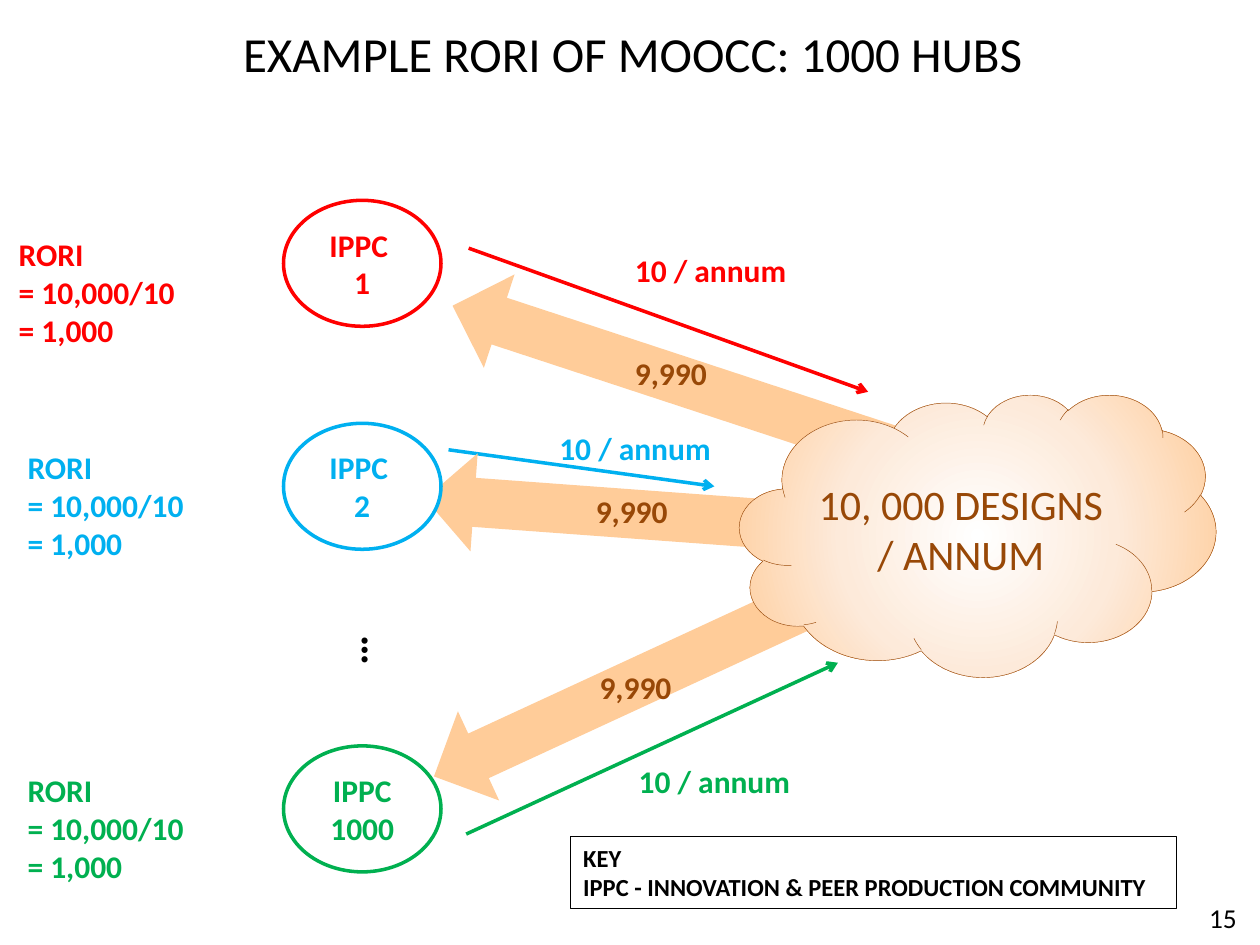
from dataclasses import dataclass

from lxml.etree import SubElement
from pptx import Presentation
from pptx.dml.color import RGBColor
from pptx.enum.shapes import MSO_CONNECTOR as Connector, MSO_SHAPE as Shape
from pptx.enum.text import MSO_ANCHOR as Anchor, PP_ALIGN as Align
from pptx.oxml import parse_xml
from pptx.oxml.ns import nsdecls, qn
from pptx.util import Inches, Pt

COLORS = {
    "black": "000000", "white": "FFFFFF", "red": "FF0000", "blue": "00B0F0",
    "green": "00B050", "brown": "984807", "peach": "FFCC99", "cream": "FDEADA",
}
SLIDE_WIDTH, SLIDE_HEIGHT = Inches(10), Inches(7.5)
COLUMN, ROW = SLIDE_WIDTH / 10, SLIDE_HEIGHT / 7.5
LABEL_HEIGHT, BLOCK_HEIGHT = 0.4, 0.78


@dataclass
class Box:
    left: float
    top: float
    width: float
    height: float

    def inner(self, left, top, width, height):
        return Box(self.left + left, self.top + top, width, height)

    def point(self, left, top):
        return int((self.left + left) * COLUMN), int((self.top + top) * ROW)

    def emu(self):
        return (*self.point(0, 0), int(self.width * COLUMN), int(self.height * ROW))


@dataclass
class Lane:
    color: str
    top: float
    hub: str
    rori: tuple
    send: tuple
    send_label: tuple
    receive: tuple
    turn: float
    receive_label: tuple


LANES = [
    Lane("red", 1.59, "IPPC \n1", (0.05, 0.23), (3.72, 0.38, 6.89, 1.52),
         (4.94, 0.35), (3.5, 1.02, 3.67), 18.2, (4.94, 1.17)),
    Lane("blue", 3.36, "IPPC \n2", (0.12, 0.15), (3.56, 0.21, 5.67, 0.5),
         (4.34, 0), (3.37, 0.32, 3.04), 4.2, (4.63, 0.5)),
    Lane("green", 5.92, "IPPC 1000", (0.12, 0.15), (3.7, 0.7, 6.65, -0.66),
         (4.97, 0.08), (3.27, -0.94, 3.78), -24.8, (4.66, -0.67)),
]


def rgb(color):
    return RGBColor.from_string(COLORS[color])


def write(holder, text, size, color, bold=False, align=Align.LEFT, **frame_format):
    frame = holder.text_frame
    frame.text = text
    for key, value in {"word_wrap": True, "vertical_anchor": Anchor.TOP, **frame_format}.items():
        setattr(frame, key, value)
    for paragraph in frame.paragraphs:
        paragraph.alignment = align
        font = paragraph.runs[0].font
        for key, value in {"name": "Calibri", "size": Pt(size), "bold": bold}.items():
            setattr(font, key, value)
        font.color.rgb = rgb(color)


def add_label(slide, box, text, size, color, **text_format):
    label = slide.shapes.add_textbox(*box.emu())
    write(label, text, size, color, **text_format)
    return label


def add_figure(slide, box, preset, fill=None, line=None, weight=2):
    figure = slide.shapes.add_shape(preset, *box.emu())
    figure.shadow.inherit = False
    if fill:
        figure.fill.solid()
        figure.fill.fore_color.rgb = rgb(fill)
    else:
        figure.fill.background()
    if line:
        figure.line.color.rgb = rgb(line)
        figure.line.width = Pt(weight)
    else:
        figure.line.fill.background()
    return figure


def add_arrow(slide, start, end, color):
    arrow = slide.shapes.add_connector(Connector.STRAIGHT, *start, *end)
    arrow.line.color.rgb = rgb(color)
    arrow.line.width = Pt(2)
    properties = arrow._element.spPr
    SubElement(properties.find(qn("a:ln")), qn("a:tailEnd"), type="arrow")
    SubElement(properties, qn("a:effectLst"))


def draw_title(slide, box):
    title = slide.shapes.title
    for side, length in zip(("left", "top", "width", "height"), box.emu()):
        setattr(title, side, length)
    write(title, "EXAMPLE RORI OF MOOCC: 1000 HUBS", 28, "black", align=Align.CENTER)


def draw_lane(slide, box, lane):
    add_arrow(slide, box.point(*lane.send[:2]), box.point(*lane.send[2:]), lane.color)
    receive = add_figure(slide, box.inner(*lane.receive, BLOCK_HEIGHT), Shape.LEFT_ARROW, "peach")
    receive.rotation = lane.turn
    add_label(slide, box.inner(*lane.send_label, 1.61, LABEL_HEIGHT),
              "10 / annum", 18, lane.color, bold=True)
    add_label(slide, box.inner(*lane.receive_label, 0.92, LABEL_HEIGHT),
              "9,990", 18, "brown", bold=True)
    hub = add_figure(slide, box.inner(2.25, 0, 1.25, box.height), Shape.OVAL, "white", lane.color)
    write(hub, lane.hub, 18, lane.color, bold=True, align=Align.CENTER,
          vertical_anchor=Anchor.MIDDLE)
    add_label(slide, box.inner(*lane.rori, 2.05, box.height),
              "RORI\n= 10,000/10\n= 1,000", 18, lane.color, bold=True)


def draw_ellipsis(slide, box):
    dots = add_label(slide, box, "…", 24, "black", bold=True, align=Align.CENTER,
                     vertical_anchor=Anchor.MIDDLE, margin_left=0, margin_right=0)
    dots.rotation = 90


def draw_designs(slide, box):
    cloud = add_figure(slide, box, Shape.CLOUD, None, "brown", 0.25)
    stops = "".join(
        f'<a:gs pos="{share * 1000}"><a:srgbClr val="{COLORS[color]}"/></a:gs>'
        for share, color in ((0, "white"), (50, "cream"), (100, "peach")))
    gradient = parse_xml(
        f'<a:gradFill {nsdecls("a")} rotWithShape="1"><a:gsLst>{stops}</a:gsLst>'
        '<a:path path="circle"><a:fillToRect l="50000" t="50000" r="50000" b="50000"/>'
        '</a:path></a:gradFill>')
    properties = cloud._element.spPr
    properties.replace(properties.find(qn("a:noFill")), gradient)
    write(cloud, "10, 000 DESIGNS / ANNUM", 24, "brown", align=Align.CENTER,
          vertical_anchor=Anchor.MIDDLE)


def draw_key(slide, box):
    key = add_figure(slide, box, Shape.RECTANGLE, None, "black", 0.75)
    write(key, "KEY\nIPPC - INNOVATION & PEER PRODUCTION COMMUNITY", 14, "black", bold=True)


def draw_page_number(slide, box):
    add_label(slide, box, "15", 15.6, "black", align=Align.CENTER,
              vertical_anchor=Anchor.MIDDLE)


def main():
    deck = Presentation()
    deck.slide_width, deck.slide_height = SLIDE_WIDTH, SLIDE_HEIGHT
    slide = deck.slides.add_slide(deck.slide_layouts[5])
    draw_title(slide, Box(0.2, 0.14, 9.64, 1.04))
    draw_key(slide, Box(4.53, 6.64, 4.81, 0.57))
    for lane in LANES:
        draw_lane(slide, Box(0, lane.top, 7, 1), lane)
    draw_ellipsis(slide, Box(2.78, 4.91, 0.45, 0.5))
    draw_designs(slide, Box(5.87, 3.13, 3.78, 2.24))
    draw_page_number(slide, Box(9.41, 7.06, 0.59, 0.44))
    deck.save("out.pptx")


if __name__ == "__main__":
    main()
